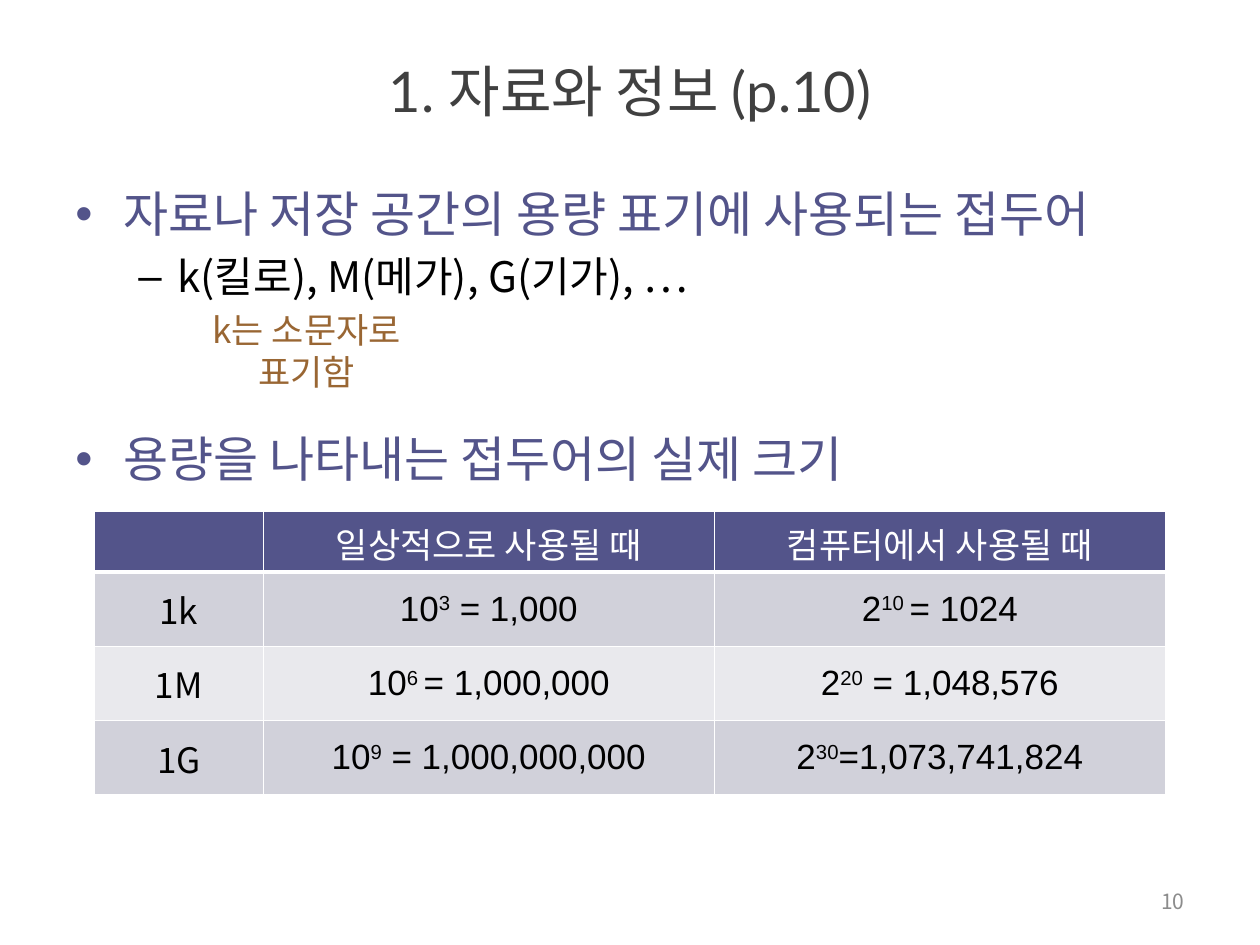
from dataclasses import dataclass
from typing import Optional

from lxml.etree import SubElement
from pptx import Presentation
from pptx.dml.color import RGBColor
from pptx.enum.text import MSO_ANCHOR as Anchor, PP_ALIGN as Align
from pptx.oxml.ns import qn
from pptx.util import Inches, Pt

NOTO = "Noto Sans CJK KR"
INDIGO, WHITE, BLACK = "53548A", "FFFFFF", "000000"
BANDS = ("D1D1DA", "E9E9ED")


@dataclass
class Run:
    text: str
    size: float
    color: str
    font: str = NOTO
    baseline: int = 0


@dataclass
class Box:
    left: float
    top: float
    width: float
    height: float
    run: Run
    align: Align
    anchor: Anchor = Anchor.MIDDLE
    leading: Optional[float] = None


@dataclass
class Bullet:
    run: Run
    char: str
    margin: float
    hang: float
    before: float


@dataclass
class Row:
    unit: str
    everyday: tuple[str, str, str]
    computer: tuple[str, str, str]


def rgb(value: str) -> RGBColor:
    return RGBColor.from_string(value)


def add_run(p, run: Run) -> None:
    r = p.add_run()
    r.text = run.text
    r.font.size = Pt(run.size)
    r.font.color.rgb = rgb(run.color)
    r.font.name = run.font
    props = r._r.get_or_add_rPr()
    SubElement(props, qn("a:ea")).set("typeface", NOTO)
    if run.baseline:
        props.set("baseline", str(run.baseline * 1000))


def add_frame(s, left: float, top: float, width: float, height: float):
    sp = s.shapes.add_textbox(Inches(left), Inches(top), Inches(width), Inches(height))
    tf = sp.text_frame
    tf.word_wrap = True
    return tf


def add_box(s, box: Box) -> None:
    tf = add_frame(s, box.left, box.top, box.width, box.height)
    tf.vertical_anchor = box.anchor
    p = tf.paragraphs[0]
    p.alignment = box.align
    if box.leading:
        p.line_spacing = Pt(box.leading)
    add_run(p, box.run)


def add_bullets(s, bullets: list[Bullet]) -> None:
    tf = add_frame(s, 0.5, 1.41, 9, 5.43)
    for i, item in enumerate(bullets):
        p = tf.add_paragraph() if i else tf.paragraphs[0]
        p.space_before = Pt(item.before)
        p.line_spacing = Pt(item.run.size * 1.2)
        props = p._p.get_or_add_pPr()
        props.set("marL", str(Inches(item.margin)))
        props.set("indent", str(-Inches(item.hang)))
        SubElement(props, qn("a:buFont")).set("typeface", "Arial")
        SubElement(props, qn("a:buChar")).set("char", item.char)
        add_run(p, item.run)


def style_cell(cell, fill: str, bottom: float, top: float) -> None:
    props = cell._tc.get_or_add_tcPr()
    for side, width in (("L", 1), ("R", 1), ("T", top), ("B", bottom)):
        line = SubElement(props, qn(f"a:ln{side}"), w=str(Pt(width)))
        SubElement(SubElement(line, qn("a:solidFill")), qn("a:srgbClr")).set("val", WHITE)
    cell.fill.solid()
    cell.fill.fore_color.rgb = rgb(fill)
    cell.vertical_anchor = Anchor.MIDDLE


def fill_cell(cell, runs: list[Run]) -> None:
    p = cell.text_frame.paragraphs[0]
    p.alignment = Align.CENTER
    for run in runs:
        add_run(p, run)


def power_runs(power: tuple[str, str, str]) -> list[Run]:
    return [Run(text, 20, BLACK, "Arial", rise) for text, rise in zip(power, (0, 30, 0))]


def add_size_table(s, headers: list[str], rows: list[Row]) -> None:
    table = s.shapes.add_table(
        len(rows) + 1, 3, Inches(0.75), Inches(4.06), Inches(8.5), Inches(2.25)
    ).table
    for column, width in zip(table.columns, (1.34, 3.58, 3.58)):
        column.width = Inches(width)
    for i, line in enumerate(table.rows):
        line.height = Inches(0.59 if i else 0.48)
        for cell in line.cells:
            style_cell(
                cell,
                BANDS[(i - 1) % 2] if i else INDIGO,
                bottom=1 if i else 3,
                top=3 if i == 1 else 1,
            )
    for j, text in enumerate(headers, start=1):
        fill_cell(table.cell(0, j), [Run(text, 20, WHITE)])
    for i, row in enumerate(rows, start=1):
        fill_cell(table.cell(i, 0), [Run(row.unit, 20, BLACK)])
        fill_cell(table.cell(i, 1), power_runs(row.everyday))
        fill_cell(table.cell(i, 2), power_runs(row.computer))


def main() -> None:
    prs = Presentation()
    prs.slide_width, prs.slide_height = Inches(10), Inches(7.5)
    s = prs.slides.add_slide(prs.slide_layouts[6])

    title = Run("1. 자료와 정보 (p.10)", 32, "404040", "Lato")
    add_box(s, Box(0.5, 0.36, 9, 0.71, title, Align.CENTER))
    add_bullets(s, [
        Bullet(Run("자료나 저장 공간의 용량 표기에 사용되는 접두어", 28, INDIGO), "•", 0.38, 0.38, 0),
        Bullet(Run("k(킬로), M(메가), G(기가), …", 24, BLACK), "–", 0.81, 0.31, 4.8),
        Bullet(Run("용량을 나타내는 접두어의 실제 크기", 28, INDIGO), "•", 0.38, 0.38, 72.8),
    ])
    add_box(s, Box(7.17, 6.95, 2.33, 0.4, Run("10", 12, "8C8C8C"), Align.RIGHT))
    add_size_table(s, ["일상적으로 사용될 때", "컴퓨터에서 사용될 때"], [
        Row("1k", ("10", "3", " = 1,000"), ("2", "10 ", "= 1024")),
        Row("1M", ("10", "6 ", "= 1,000,000"), ("2", "20", " = 1,048,576")),
        Row("1G", ("10", "9", " = 1,000,000,000"), ("2", "30", "=1,073,741,824")),
    ])
    note = Run("k는 소문자로 표기함", 20, "996633")
    add_box(s, Box(1.26, 2.4, 2.35, 0.44, note, Align.CENTER, Anchor.TOP, 24))

    prs.save("out.pptx")


if __name__ == "__main__":
    main()
